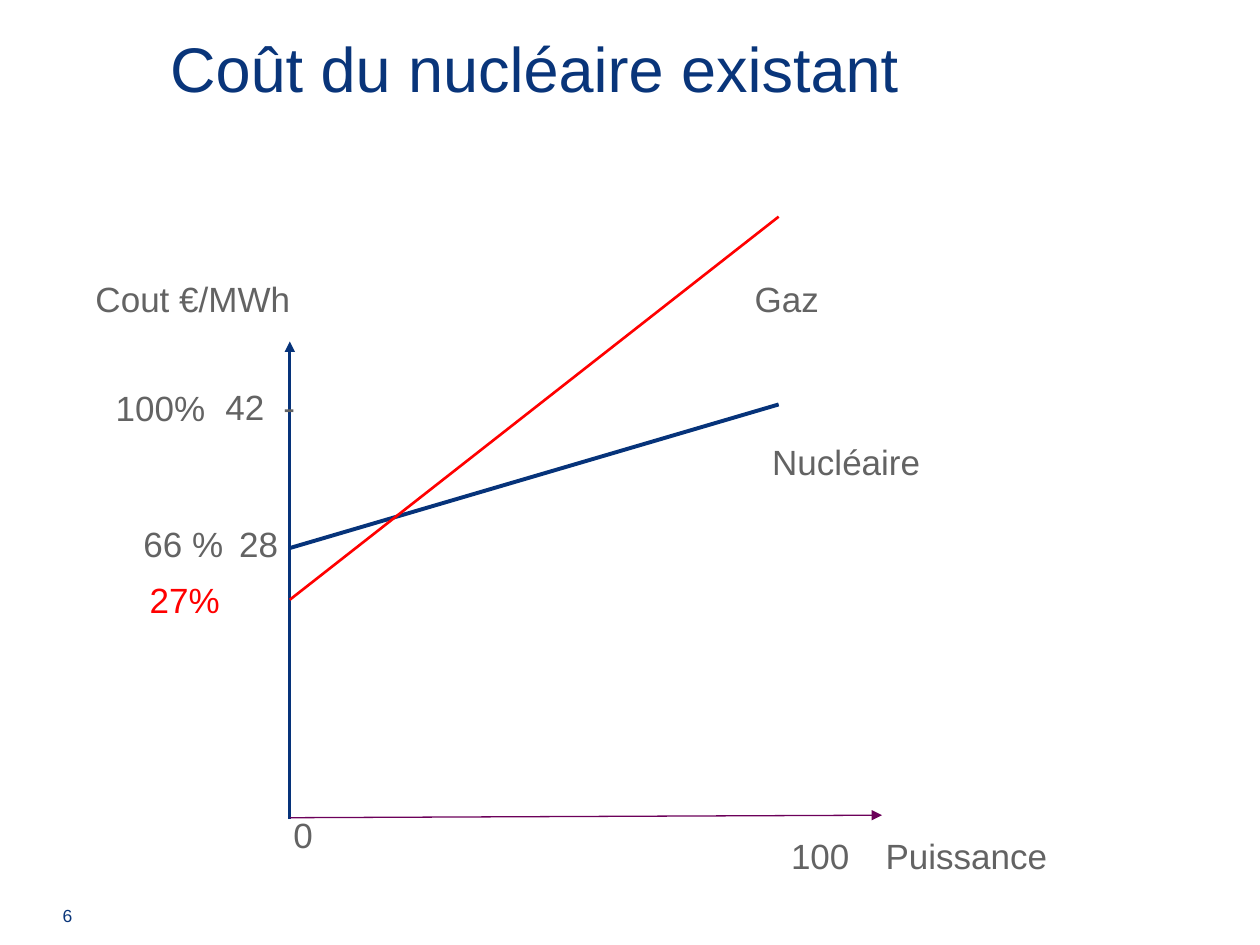
from lxml.etree import SubElement
from pptx import Presentation
from pptx.dml.color import RGBColor
from pptx.enum.shapes import MSO_CONNECTOR
from pptx.enum.text import MSO_ANCHOR, PP_ALIGN
from pptx.oxml.ns import qn
from pptx.util import Inches, Pt

NAVY, BLUE, PURPLE = "09357A", "06337A", "6C005A"
GREY, RED = "636363", "FF0000"


def write_text(shape, text, size=20, color=GREY, align=PP_ALIGN.LEFT,
               anchor=MSO_ANCHOR.TOP, margins=(0.1, 0.05), wrap=True, spacing=None):
    frame = shape.text_frame
    frame.word_wrap = wrap
    frame.vertical_anchor = anchor
    frame.margin_left = frame.margin_right = Inches(margins[0])
    frame.margin_top = frame.margin_bottom = Inches(margins[1])
    paragraph = frame.paragraphs[0]
    paragraph.alignment = align
    paragraph.line_spacing = spacing
    run = paragraph.add_run()
    run.text = text
    run.font.name = "Arial"
    run.font.size = Pt(size)
    run.font.color.rgb = RGBColor.from_string(color)
    return paragraph


def add_line(slide, start, end, color, width, arrow=False):
    line = slide.shapes.add_connector(
        MSO_CONNECTOR.STRAIGHT, *[Inches(value) for value in (*start, *end)])
    line.line.color.rgb = RGBColor.from_string(color)
    line.line.width = Pt(width)
    if arrow:
        SubElement(line.line._get_or_add_ln(), qn("a:tailEnd"), type="triangle")
    SubElement(line._element.spPr, qn("a:effectLst"))


presentation = Presentation()
presentation.slide_width = Inches(10)
presentation.slide_height = Inches(7.5)
slide = presentation.slides.add_slide(presentation.slide_layouts[5])

# Title
title = slide.shapes.title
title.left, title.top = Inches(1.29), Inches(0.04)
title.width, title.height = Inches(8.21), Inches(1.07)
write_text(title, "Coût du nucléaire existant", size=36, color=NAVY,
           anchor=MSO_ANCHOR.MIDDLE, margins=(0.06, 0.01), spacing=0.9)

# Slide number
number = slide.shapes.add_textbox(Inches(0.41), Inches(7.15), Inches(0.25), Inches(0.23))
write_text(number, "6", size=10, color=NAVY, align=PP_ALIGN.CENTER,
           anchor=MSO_ANCHOR.MIDDLE, margins=(0, 0.01))

# Axes and cost lines, all starting from the vertical axis
axis_x, full_power_x = 2.3, 6.18
add_line(slide, (axis_x, 6.5), (axis_x, 2.71), BLUE, 1.5, arrow=True)
add_line(slide, (axis_x, 6.49), (7, 6.47), PURPLE, 0.75, arrow=True)
add_line(slide, (axis_x, 4.35), (full_power_x, 3.21), BLUE, 2.25)
add_line(slide, (axis_x, 4.76), (full_power_x, 1.72), RED, 1.5)

# Labels: text, left, top, width, format
labels = [
    ("Cout €/MWh", 0.66, 2.15, 1.84, {}),
    ("28", 1.8, 4.1, 0.59, {}),
    ("Puissance", 6.93, 6.57, 2.57, {}),
    ("42\t-", 1.69, 3.01, 1.13, {}),
    ("0", 2.23, 6.41, 0.36, {}),
    ("100", 6.18, 6.57, 0.67, {"wrap": False}),
    ("Gaz", 5.89, 2.15, 0.72, {"wrap": False}),
    ("Nucléaire", 6.03, 3.45, 1.39, {"wrap": False}),
    ("66 %", 1.04, 4.1, 0.91, {}),
    ("27%", 1.09, 4.54, 1.46, {"color": RED}),
    ("100%", 0.82, 3.02, 1.07, {}),
]
for text, left, top, width, style in labels:
    label = slide.shapes.add_textbox(Inches(left), Inches(top), Inches(width), Inches(0.44))
    paragraph = write_text(label, text, **style)
    if "\t" in text:  # the tab stop places the tick mark on the axis
        tab_stops = SubElement(paragraph._p.get_or_add_pPr(), qn("a:tabLst"))
        SubElement(tab_stops, qn("a:tab"), pos=str(Inches(0.46)), algn="l")

presentation.save("out.pptx")
